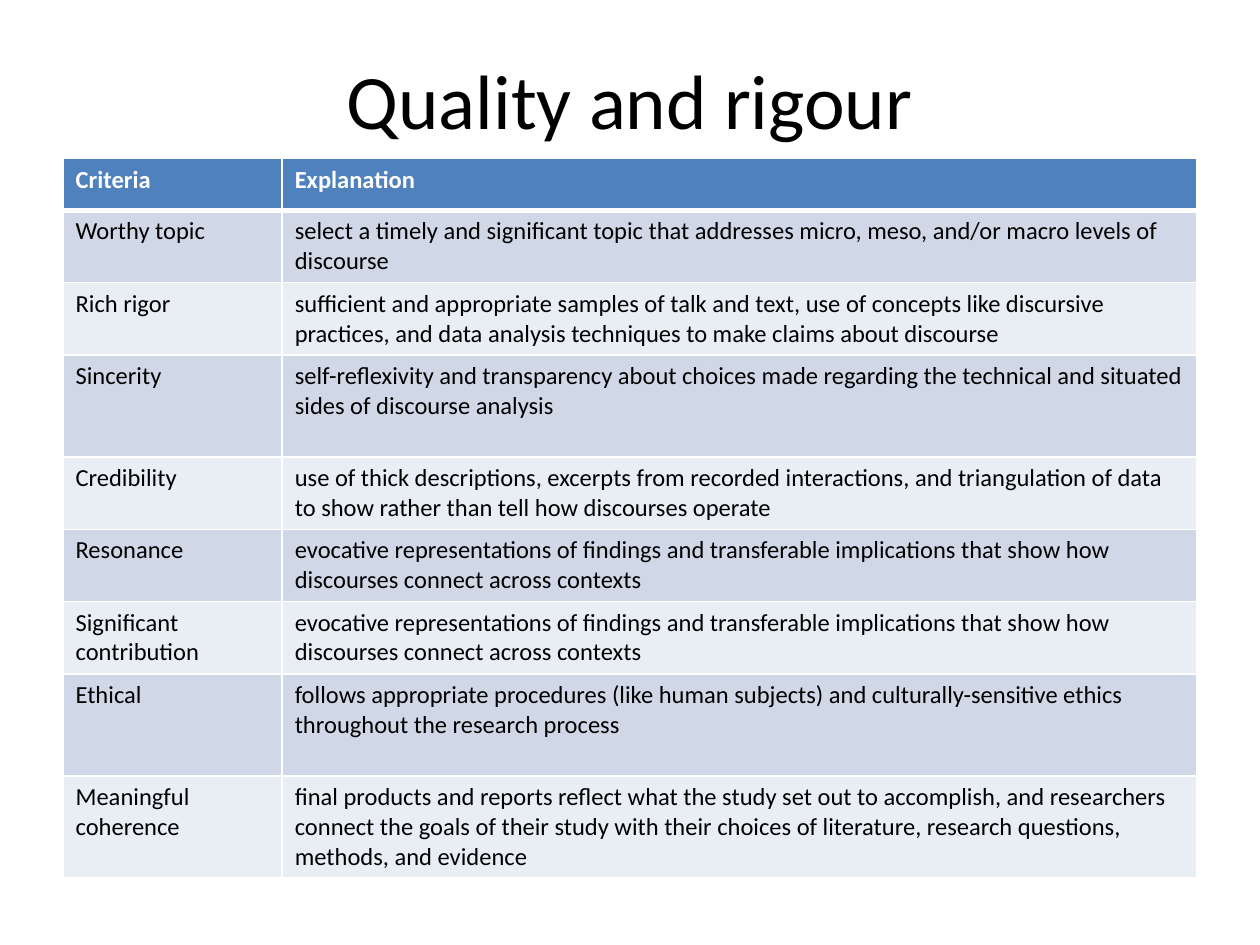
"""Build the "Quality and rigour" slide with its table of criteria."""
from dataclasses import dataclass

from lxml import etree
from pptx import Presentation
from pptx.dml.color import RGBColor
from pptx.enum.text import MSO_ANCHOR, PP_ALIGN
from pptx.oxml.ns import qn
from pptx.util import Inches, Pt

CENTER = PP_ALIGN.CENTER
MIDDLE = MSO_ANCHOR.MIDDLE
WHITE = RGBColor(0xFF, 0xFF, 0xFF)
BLACK = RGBColor(0x00, 0x00, 0x00)
BLUE = RGBColor(0x4F, 0x81, 0xBD)
BANDS = (RGBColor(0xE9, 0xED, 0xF4), RGBColor(0xD0, 0xD8, 0xE8))
COL_WIDTHS = (1.74, 7.26)
HEADER_H, TWO_LINES, THREE_LINES = 0.41, 0.57, 0.81
THIN, THICK = 1, 3
TITLE_FONT = {"name": "Calibri", "size": Pt(44)}
CELL_FONT = {"name": "Calibri", "size": Pt(14)}


@dataclass
class Criterion:
    name: str
    explanation: str
    height: float = TWO_LINES


ROWS = [
    Criterion("Criteria", "Explanation", HEADER_H),
    Criterion("Worthy topic", "select a timely and significant topic that addresses "
              "micro, meso, and/or macro levels of discourse"),
    Criterion("Rich rigor", "sufficient and appropriate samples of talk and text, use of "
              "concepts like discursive practices, and data analysis techniques to make "
              "claims about discourse"),
    Criterion("Sincerity", "self-reflexivity and transparency about choices made regarding "
              "the technical and situated sides of discourse analysis", THREE_LINES),
    Criterion("Credibility", "use of thick descriptions, excerpts from recorded "
              "interactions, and triangulation of data to show rather than tell how "
              "discourses operate"),
    *(Criterion(name, "evocative representations of findings and transferable implications "
                "that show how discourses connect across contexts")
      for name in ("Resonance", "Significant contribution")),
    Criterion("Ethical", "follows appropriate procedures (like human subjects) and "
              "culturally-sensitive ethics throughout the research process", THREE_LINES),
    Criterion("Meaningful coherence", "final products and reports reflect what the study "
              "set out to accomplish, and researchers connect the goals of their study "
              "with their choices of literature, research questions, methods, and evidence",
              THREE_LINES),
]


def write(tf, text: str, fmt: dict, color: RGBColor):
    p = tf.paragraphs[0]
    r = p.add_run()
    r.text = text
    for key, value in fmt.items():
        setattr(r.font, key, value)
    r.font.color.rgb = color
    return p


def set_borders(cell, top: int, bottom: int) -> None:
    tc_pr = cell._tc.get_or_add_tcPr()
    for tag, width in (("a:lnL", THIN), ("a:lnR", THIN), ("a:lnT", top), ("a:lnB", bottom)):
        ln = etree.SubElement(tc_pr, qn(tag), w=str(Pt(width)))
        fill = etree.SubElement(ln, qn("a:solidFill"))
        etree.SubElement(fill, qn("a:srgbClr"), val=str(WHITE))


def add_title(s, text: str) -> None:
    sp = s.shapes.title
    box = {"left": 0.5, "top": 0.3, "width": 9, "height": 0.96}
    for key, value in box.items():
        setattr(sp, key, Inches(value))
    sp.text_frame.vertical_anchor = MIDDLE
    p = write(sp.text_frame, text, TITLE_FONT, BLACK)
    p.alignment = CENTER


def add_criteria_table(s, rows: list[Criterion]) -> None:
    height = sum(row.height for row in rows)
    table = s.shapes.add_table(len(rows), len(COL_WIDTHS), Inches(0.5), Inches(1.26),
                               Inches(sum(COL_WIDTHS)), Inches(height)).table
    for col, width in zip(table.columns, COL_WIDTHS):
        col.width = Inches(width)
    for i, row in enumerate(rows):
        header = i == 0
        table.rows[i].height = Inches(row.height)
        for j, text in enumerate((row.name, row.explanation)):
            cell = table.cell(i, j)
            set_borders(cell, THICK if i == 1 else THIN, THICK if header else THIN)
            cell.fill.solid()
            cell.fill.fore_color.rgb = BLUE if header else BANDS[i % 2]
            write(cell.text_frame, text, CELL_FONT | {"bold": header},
                  WHITE if header else BLACK)


def main() -> None:
    prs = Presentation()
    prs.slide_width, prs.slide_height = Inches(10), Inches(7.5)
    s = prs.slides.add_slide(prs.slide_layouts[5])
    add_criteria_table(s, ROWS)
    add_title(s, "Quality and rigour")
    prs.save("out.pptx")


if __name__ == "__main__":
    main()
